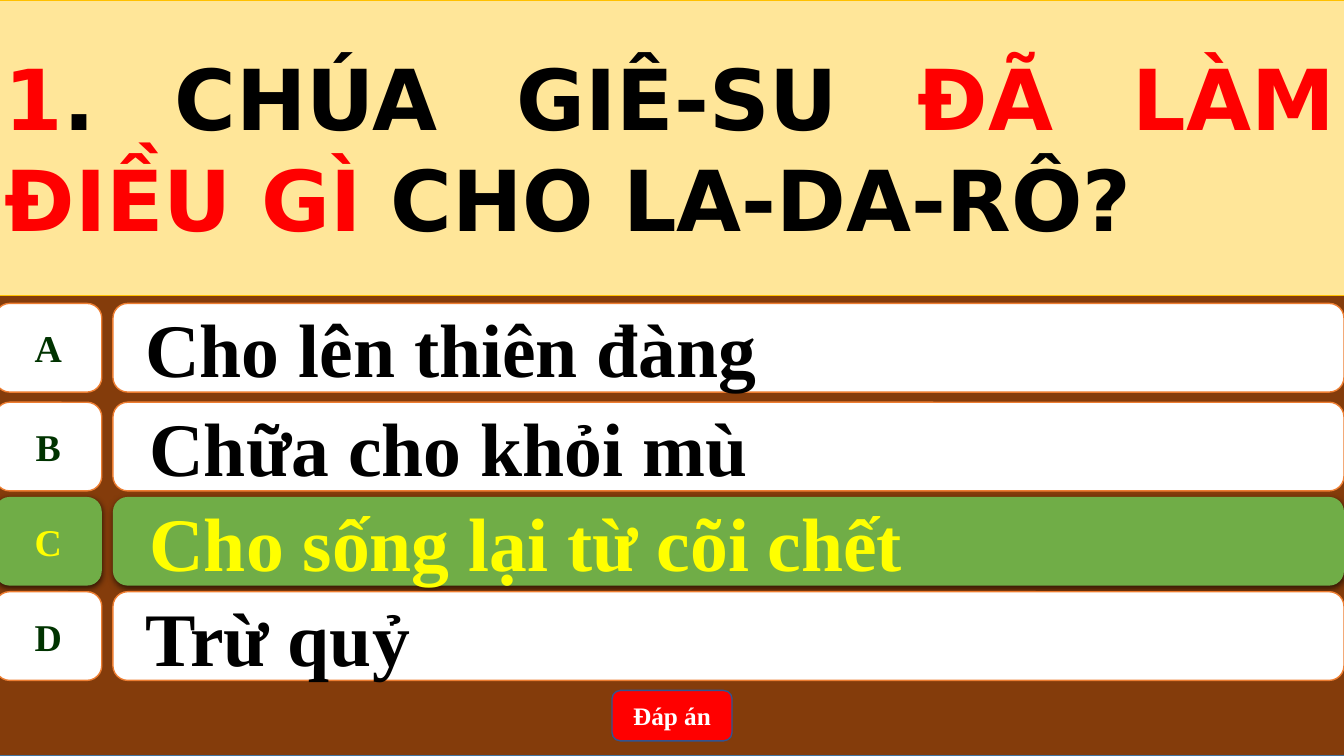
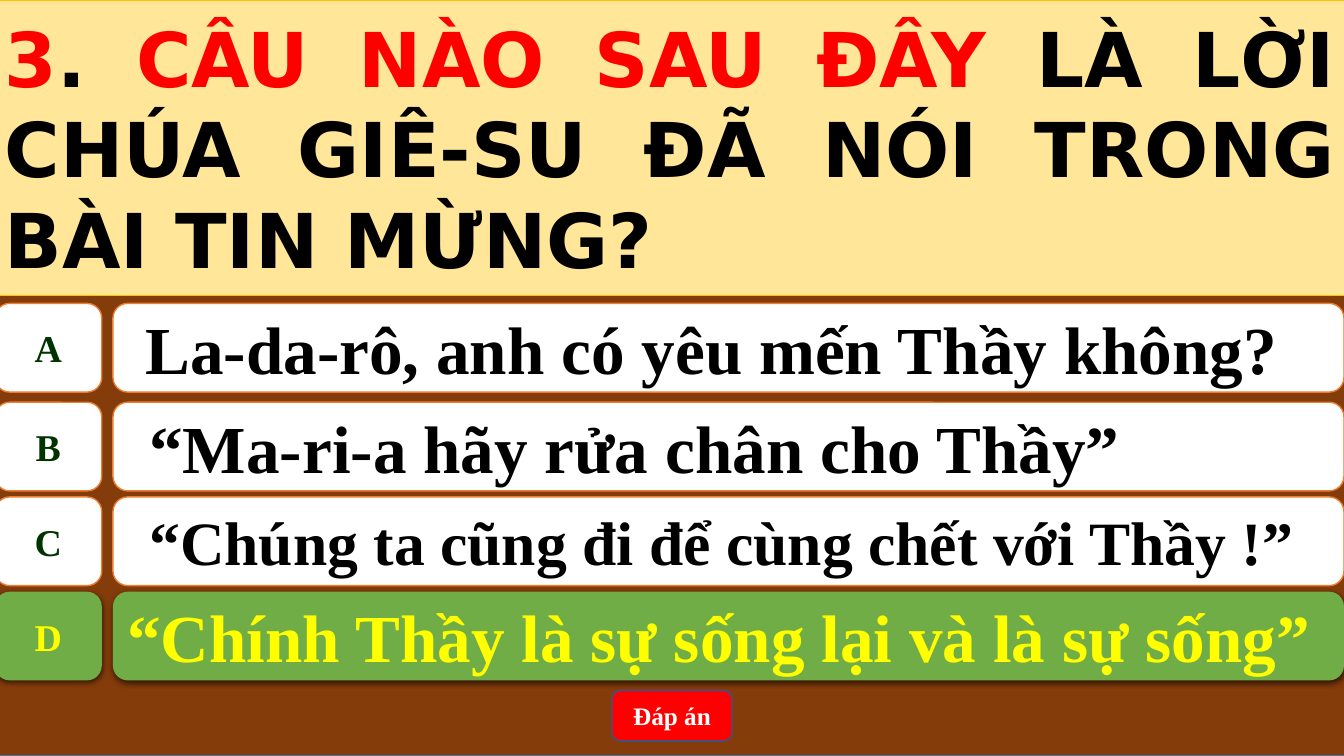
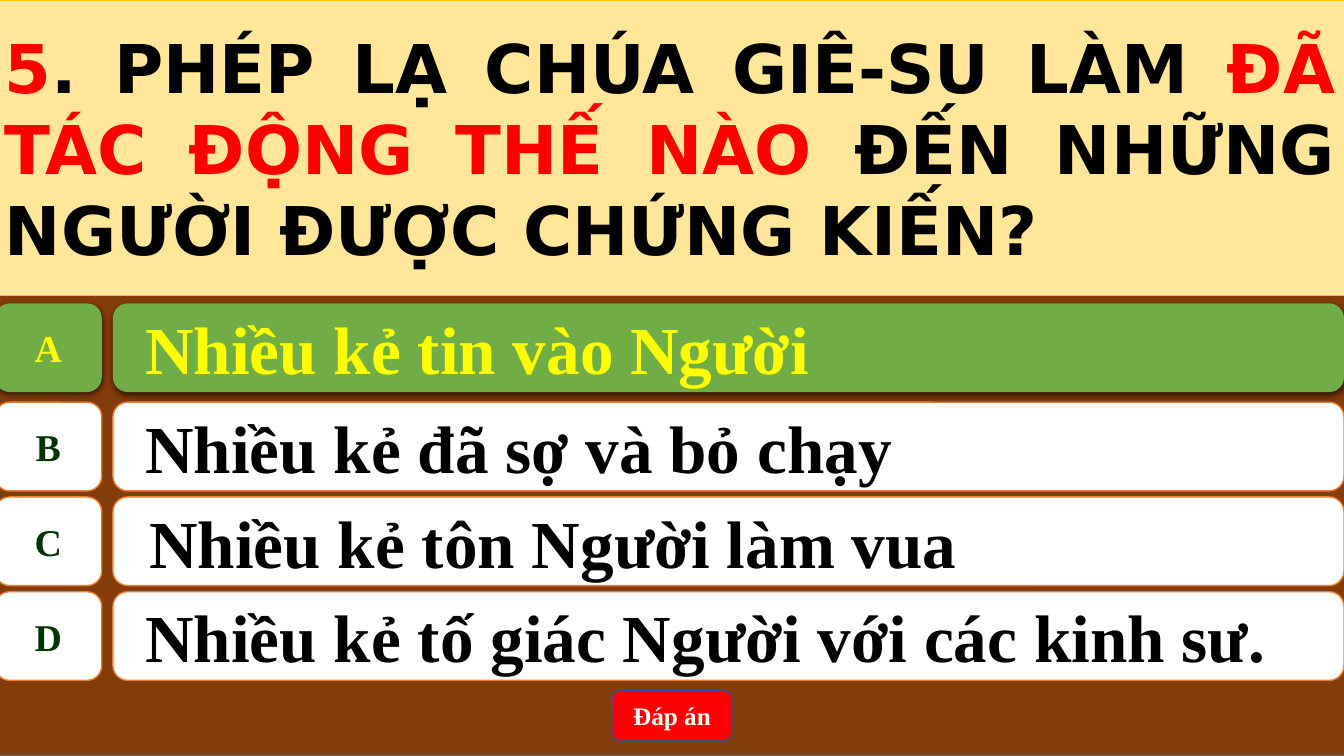
from lxml import etree
from pptx import Presentation
from pptx import util as u
from pptx.dml.color import RGBColor
from pptx.enum import shapes, text
from pptx.oxml.ns import qn

COLOURS = {
    "brown": "843C0B", "brown_edge": "43739E",
    "cream": "FFE699", "gold": "FFC000",
    "white": "FFFFFF", "orange": "ED7D31",
    "green": "70AD47", "yellow": "FFFF00",
    "red": "FF0000", "button_edge": "325491",
    "dark_green": "003300", "black": "000000",
}
SERIF, SANS = "Times New Roman", "DejaVu Sans"
SHAPE = shapes.MSO_SHAPE
ALIGN = text.PP_ALIGN

# Shared layout, in inches
LEFT, FULL_WIDTH, PAGE_HEIGHT = -0.05, 13.39, 7.5
QUESTION_HEIGHT = 2.93
ROW_TOPS = {"A": 3.01, "B": 3.99, "C": 4.93, "D": 5.87}
ROW_HEIGHT = 0.88
LETTER_WIDTH = 1.06
ANSWER_LEFT, ANSWER_WIDTH = 1.12, 12.21
NEAR, FAR = 0.18, 0.22  # text indents

# Question spans are (text, colour); answers are (text, size, indent)
QUIZ = [
    {
        "size": 60,
        "question": [("1", "red"), (". CHÚA GIÊ-SU ", "black"),
                     ("ĐÃ LÀM ĐIỀU GÌ", "red"), (" CHO LA-DA-RÔ?", "black")],
        "answers": {
            "A": ("Cho lên thiên đàng", 54, NEAR),
            "B": ("Chữa cho khỏi mù", 54, FAR),
            "C": ("Cho sống lại từ cõi chết", 54, FAR),
            "D": ("Trừ quỷ", 54, NEAR),
        },
        "correct": "C",
    },
    {
        "size": 54,
        "question": [("3", "red"), (". ", "black"), ("CÂU NÀO SAU ĐÂY", "red"),
                     (" LÀ LỜI CHÚA GIÊ-SU ĐÃ NÓI TRONG BÀI TIN MỪNG?", "black")],
        "answers": {
            "A": ("La-da-rô, anh có yêu mến Thầy không?", 48, NEAR),
            "B": ("“Ma-ri-a hãy rửa chân cho Thầy”", 48, FAR),
            "C": ("“Chúng ta cũng đi để cùng chết với Thầy !”", 44, FAR),
            "D": ("“Chính Thầy là sự sống lại và là sự sống”", 48, 0),
        },
        "correct": "D",
    },
    {
        "size": 48,
        "question": [("5", "red"), (". PHÉP LẠ CHÚA GIÊ-SU LÀM ", "black"),
                     ("ĐÃ TÁC ĐỘNG THẾ NÀO ", "red"),
                     ("ĐẾN NHỮNG NGƯỜI ĐƯỢC CHỨNG KIẾN?", "black")],
        "answers": {
            "A": ("Nhiều kẻ tin vào Người", 48, NEAR),
            "B": ("Nhiều kẻ đã sợ và bỏ chạy", 48, NEAR),
            "C": ("Nhiều kẻ tôn Người làm vua", 48, FAR),
            "D": ("Nhiều kẻ tố giác Người với các kinh sư.", 48, NEAR),
        },
        "correct": "A",
    },
]


def rgb(name):
    return RGBColor.from_string(COLOURS[name])


def add_box(parent, kind, left, top, width, height, fill, line=None, weight=1):
    """Add a filled shape to a page or a group."""
    box = parent.shapes.add_shape(kind, u.Inches(left), u.Inches(top),
                                  u.Inches(width), u.Inches(height))
    box.shadow.inherit = False
    box.fill.solid()
    box.fill.fore_color.rgb = rgb(fill)
    if line:
        box.line.color.rgb = rgb(line)
        box.line.width = u.Pt(weight)
    else:
        box.line.fill.background()
    return box


def write(box, spans, *, size, font=SERIF, align=ALIGN.LEFT, indent=0, wrap=True):
    """Fill a box with one bold paragraph of (text, colour) spans."""
    frame = box.text_frame
    frame.word_wrap = wrap
    frame.vertical_anchor = text.MSO_ANCHOR.MIDDLE
    para = frame.paragraphs[0]
    para.alignment = align
    if indent:
        para._p.get_or_add_pPr().set("marL", str(u.Inches(indent)))
    for words, colour in spans:
        span = para.add_run()
        span.text = words
        span.font.name = font
        span.font.size = u.Pt(size)
        span.font.bold = True
        span.font.color.rgb = rgb(colour)


def add_shadow(box):
    """Add a soft shadow below the box."""
    effects = box._element.spPr.find(qn("a:effectLst"))
    shadow = etree.SubElement(effects, qn("a:outerShdw"), blurRad=str(u.Pt(4.5)),
                              dist=str(u.Pt(1.5)), dir="5400000", rotWithShape="0")
    colour = etree.SubElement(shadow, qn("a:srgbClr"), val=COLOURS["black"])
    etree.SubElement(colour, qn("a:alpha"), val="63000")


def add_answer(page, letter, answer, correct):
    """Add a letter and its answer as one group."""
    words, size, indent = answer
    fill, line = ("green", None) if correct else ("white", "orange")
    letter_colour, answer_colour = (("yellow", "yellow") if correct
                                    else ("dark_green", "black"))
    row = page.shapes.add_group_shape()
    top = ROW_TOPS[letter]

    answer_box = add_box(row, SHAPE.ROUNDED_RECTANGLE, ANSWER_LEFT, top,
                         ANSWER_WIDTH, ROW_HEIGHT, fill, line)
    write(answer_box, [(words, answer_colour)], size=size, indent=indent)
    letter_box = add_box(row, SHAPE.FLOWCHART_ALTERNATE_PROCESS, LEFT, top,
                         LETTER_WIDTH, ROW_HEIGHT, fill, line)
    write(letter_box, [(letter, letter_colour)], size=27, align=ALIGN.CENTER, wrap=False)
    if correct:
        add_shadow(answer_box)
        add_shadow(letter_box)


def add_quiz_page(deck, item):
    page = deck.slides.add_slide(deck.slide_layouts[6])

    # Background and question band
    add_box(page, SHAPE.RECTANGLE, LEFT, 0, FULL_WIDTH, PAGE_HEIGHT,
            "brown", "brown_edge")
    band = add_box(page, SHAPE.RECTANGLE, LEFT, 0, FULL_WIDTH, QUESTION_HEIGHT,
                   "cream", "gold", 0.5)
    write(band, item["question"], size=item["size"], font=SANS, align=ALIGN.JUSTIFY)

    # Answers
    for letter, answer in item["answers"].items():
        add_answer(page, letter, answer, letter == item["correct"])

    # Answer button
    button = add_box(page, SHAPE.ROUNDED_RECTANGLE, 6.07, 6.85, 1.19, 0.5,
                     "red", "button_edge")
    write(button, [("Đáp án", "white")], size=18, align=ALIGN.CENTER)


def main():
    deck = Presentation()
    deck.slide_width = u.Inches(13.33)
    deck.slide_height = u.Inches(PAGE_HEIGHT)
    for item in QUIZ:
        add_quiz_page(deck, item)
    deck.save("out.pptx")


if __name__ == "__main__":
    main()
